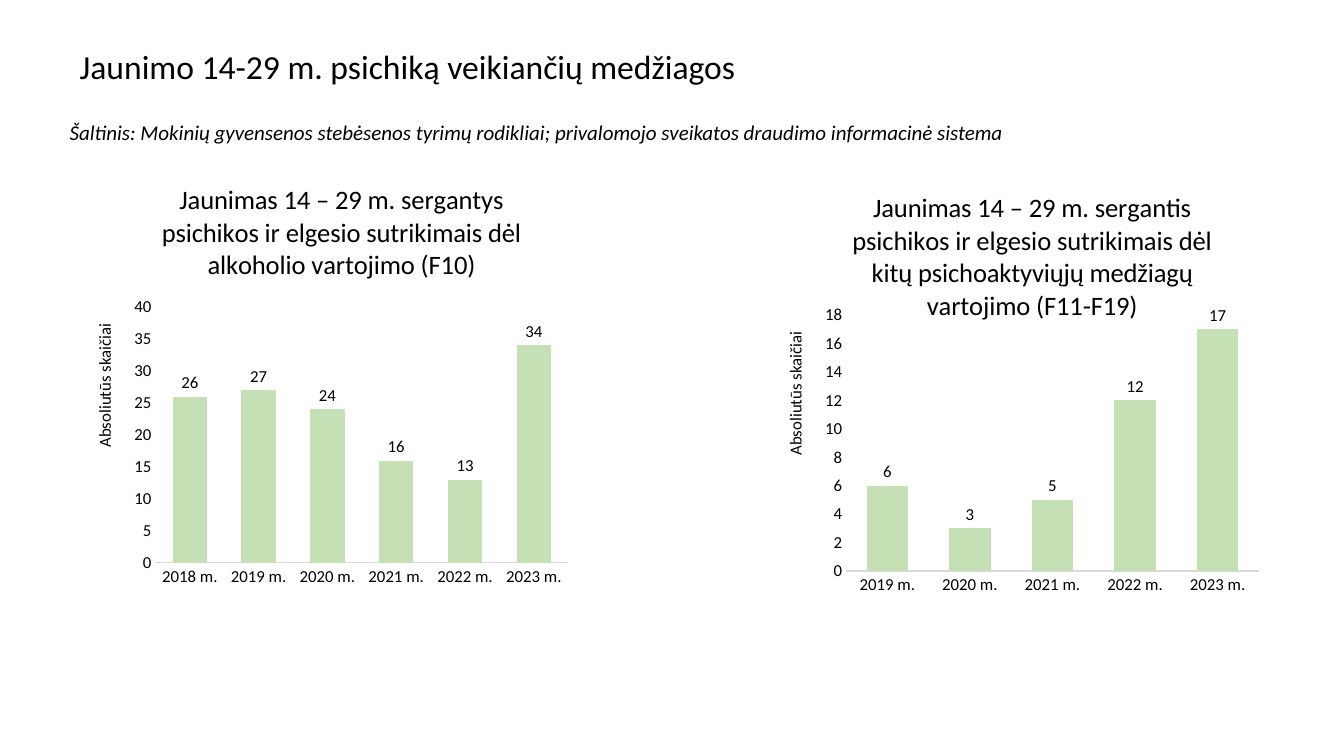
from dataclasses import dataclass

from lxml import etree
from pptx import Presentation
from pptx.chart.data import CategoryChartData
from pptx.dml.color import RGBColor
from pptx.enum.chart import XL_CHART_TYPE, XL_LABEL_POSITION, XL_TICK_MARK
from pptx.enum.text import MSO_ANCHOR, PP_ALIGN
from pptx.oxml.ns import qn
from pptx.util import Inches, Pt

COLUMNS = XL_CHART_TYPE.COLUMN_CLUSTERED
OUTSIDE_END = XL_LABEL_POSITION.OUTSIDE_END
NO_TICK = XL_TICK_MARK.NONE
MIDDLE = MSO_ANCHOR.MIDDLE
LEFT = PP_ALIGN.LEFT


@dataclass(frozen=True)
class Theme:
    font: str = "Calibri"
    text: RGBColor = RGBColor(0, 0, 0)
    bar: RGBColor = RGBColor(0xC5, 0xE0, 0xB4)
    axis: RGBColor = RGBColor(0xD9, 0xD9, 0xD9)
    title_size: int = 24
    source_size: int = 15
    chart_title_size: int = 19
    label_size: int = 12
    chart_size: int = 10


class SlideBuilder:
    def __init__(self, slide, theme):
        self.slide = slide
        self.theme = theme

    def style_font(self, font, size, bold=False, italic=False):
        font.name = self.theme.font
        font.size = Pt(size)
        font.bold = bold
        font.italic = italic
        font.color.rgb = self.theme.text

    def add_title(self, text, left, top, width, height):
        title = self.slide.shapes.title
        title.left, title.top = Inches(left), Inches(top)
        title.width, title.height = Inches(width), Inches(height)
        title.text_frame.text = text
        title.text_frame.vertical_anchor = MIDDLE
        paragraph = title.text_frame.paragraphs[0]
        paragraph.alignment = LEFT
        paragraph.line_spacing = 0.9
        self.style_font(paragraph.runs[0].font, self.theme.title_size)

    def add_source(self, text, left, top, width, height):
        box = self.slide.shapes.add_textbox(
            Inches(left), Inches(top), Inches(width), Inches(height))
        frame = box.text_frame
        frame.word_wrap = True
        frame.margin_left = frame.margin_right = 0
        frame.margin_top = frame.margin_bottom = 0
        frame.text = text
        self.style_font(frame.paragraphs[0].runs[0].font, self.theme.source_size, italic=True)

    def set_layout(self, parent, x, y, width=None, height=None):
        for old_layout in parent.findall(qn("c:layout")):
            parent.remove(old_layout)
        layout = etree.Element(qn("c:layout"))
        manual = etree.SubElement(layout, qn("c:manualLayout"))
        settings = [("xMode", "edge"), ("yMode", "edge"), ("x", x), ("y", y)]
        if width is not None:
            settings = [("layoutTarget", "inner"), *settings, ("w", width), ("h", height)]
        for name, value in settings:
            etree.SubElement(manual, qn(f"c:{name}")).set("val", str(value))
        text = parent.find(qn("c:tx"))
        parent.insert(0 if text is None else parent.index(text) + 1, layout)

    def add_chart_text(self, title, text, size, x, y):
        title.text_frame.text = text
        self.style_font(title.text_frame.paragraphs[0].runs[0].font, size)
        element = title.text_frame._txBody.getparent().getparent()
        self.set_layout(element, x, y)

    def style_axis(self, axis):
        axis.major_tick_mark = axis.minor_tick_mark = NO_TICK
        axis.has_major_gridlines = False
        self.style_font(axis.tick_labels.font, self.theme.label_size)

    def add_column_chart(self, title, categories, values, maximum, step,
                         left, top, width, height):
        data = CategoryChartData()
        data.categories = categories
        data.add_series("Series 1", values)
        chart = self.slide.shapes.add_chart(
            COLUMNS, Inches(left), Inches(top), Inches(width), Inches(height), data).chart
        self.style_font(chart.font, self.theme.chart_size)
        chart.has_legend = False
        chart.has_title = True
        self.add_chart_text(chart.chart_title, title, self.theme.chart_title_size, 0.17, 0.03)
        chart.chart_title.include_in_layout = False

        self.style_axis(chart.category_axis)
        chart.category_axis.format.line.color.rgb = self.theme.axis
        chart.category_axis.format.line.width = Pt(0.75)

        value_axis = chart.value_axis
        self.style_axis(value_axis)
        value_axis.format.line.fill.background()
        value_axis.minimum_scale = 0
        value_axis.maximum_scale = maximum
        value_axis.major_unit = step
        value_axis.has_title = True
        self.add_chart_text(
            value_axis.axis_title, "Absoliutūs skaičiai", self.theme.label_size, 0.04, 0.31)
        body = value_axis.axis_title.text_frame._txBody.find(qn("a:bodyPr"))
        body.set("rot", "-5400000")
        body.set("vert", "horz")

        plot = chart.plots[0]
        plot.gap_width = 100
        plot.overlap = -24
        plot.vary_by_categories = False
        fill = plot.series[0].format.fill
        fill.solid()
        fill.fore_color.rgb = self.theme.bar
        plot.has_data_labels = True
        labels = plot.data_labels
        labels.show_value = True
        labels.position = OUTSIDE_END
        self.style_font(labels.font, self.theme.label_size)
        plot_area = chart.element.find(qn("c:chart")).find(qn("c:plotArea"))
        self.set_layout(plot_area, 0.167, 0.284, 0.803, 0.499)


def main():
    presentation = Presentation()
    presentation.slide_width = Inches(13.33)
    presentation.slide_height = Inches(7.5)
    slide = presentation.slides.add_slide(presentation.slide_layouts[5])
    builder = SlideBuilder(slide, Theme())
    years = [f"{year} m." for year in range(2018, 2024)]

    builder.add_title("Jaunimo 14-29 m. psichiką veikiančių medžiagos", 0.69, 0.18, 11.96, 1.01)
    builder.add_column_chart(
        "Jaunimas 14 – 29 m. sergantys psichikos ir elgesio sutrikimais "
        "dėl alkoholio vartojimo (F10)",
        years, [26, 27, 24, 16, 13, 34], 40, 5, 0.69, 1.6, 5.1, 5.09)
    builder.add_source(
        "Šaltinis: Mokinių gyvensenos stebėsenos tyrimų rodikliai; "
        "privalomojo sveikatos draudimo informacinė sistema",
        0.69, 1.19, 11.96, 0.25)
    builder.add_column_chart(
        "Jaunimas 14 – 29 m. sergantis psichikos ir elgesio sutrikimais "
        "dėl kitų psichoaktyviųjų medžiagų vartojimo (F11-F19)",
        years[1:], [6, 3, 5, 12, 17], 18, 2, 7.54, 1.68, 5.1, 5.09)
    presentation.save("out.pptx")


if __name__ == "__main__":
    main()
